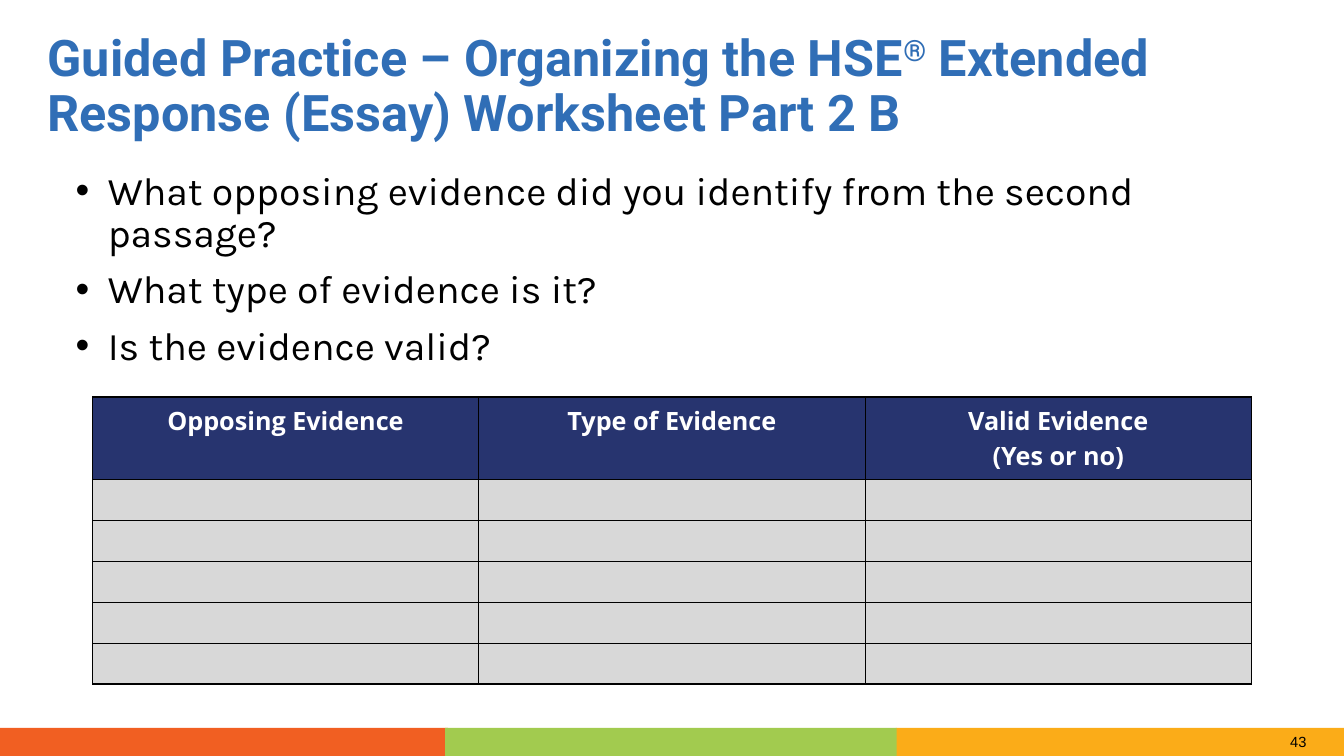
from lxml.etree import SubElement
from pptx import Presentation
from pptx.dml.color import RGBColor
from pptx.enum.shapes import MSO_SHAPE as Preset
from pptx.enum.text import MSO_ANCHOR as Anchor, PP_ALIGN as Align
from pptx.oxml.ns import qn
from pptx.util import Pt

COLORS = {
    "title": "306EB6", "ink": "000000", "white": "FFFFFF",
    "header": "27346F", "cell": "D8D8D8",
    "orange": "F15F22", "green": "A2CB4F", "amber": "FBAC18",
}
QUESTIONS = [
    "What opposing evidence did you identify from the second passage?",
    "What type of evidence is it?",
    "Is the evidence valid?",
]
HEADINGS = ["Opposing Evidence", "Type of Evidence", "Valid Evidence\n(Yes or no)"]
ANSWER_ROWS = 5


def color(name):
    return RGBColor.from_string(COLORS[name])


class Worksheet:
    """Draws styled elements on one page."""

    def __init__(self, page):
        self.page = page

    def format(self, span, font, size, ink, bold=False):
        span.font.name = font
        span.font.size = Pt(size)
        span.font.bold = bold
        span.font.color.rgb = color(ink)

    def bar(self, left, width, fill):
        bar = self.page.shapes.add_shape(
            Preset.RECTANGLE, Pt(left), Pt(520), Pt(width), Pt(20))
        bar.shadow.inherit = False
        bar.fill.solid()
        bar.fill.fore_color.rgb = color(fill)
        bar.line.fill.background()

    def text_box(self, left, top, width, height, anchor=Anchor.TOP):
        box = self.page.shapes.add_textbox(Pt(left), Pt(top), Pt(width), Pt(height))
        frame = box.text_frame
        frame.word_wrap = True
        frame.vertical_anchor = anchor
        frame.margin_left = frame.margin_right = 0
        frame.margin_top = frame.margin_bottom = 0
        return frame

    def title(self, before, mark, after):
        para = self.text_box(34, 30, 893, 65, Anchor.MIDDLE).paragraphs[0]
        para.line_spacing = 0.9
        for text in (before, mark, after):
            span = para.add_run()
            span.text = text
            self.format(span, "Roboto", 36, "title", bold=True)
            if text == mark:
                span.font._element.set("baseline", "30000")

    def bullets(self, lines):
        frame = self.text_box(54, 122.4, 872.6, 293.8)
        frame.text = "\n".join(lines)
        for index, para in enumerate(frame.paragraphs):
            para.line_spacing = 0.9
            para.space_before = Pt(10 if index else 0)
            props = para._p.get_or_add_pPr()
            props.set("marL", str(Pt(23)))
            props.set("indent", str(-Pt(23)))
            SubElement(props, qn("a:buFont"), typeface="Arial")
            SubElement(props, qn("a:buChar"), char="•")
            self.format(para.runs[0], "Karla", 28, "ink")

    def borders(self, cell, widths):
        """Draw black borders; widths maps a side (L, R, T, B) to points."""
        props = cell._tc.get_or_add_tcPr()
        for index, (side, width) in enumerate(widths.items()):
            line = props.makeelement(qn(f"a:ln{side}"), {"w": str(Pt(width))})
            fill = SubElement(line, qn("a:solidFill"))
            SubElement(fill, qn("a:srgbClr"), val=COLORS["ink"])
            props.insert(index, line)

    def table(self, headings, answer_rows):
        table = self.page.shapes.add_table(
            answer_rows + 1, len(headings), Pt(66), Pt(283.6), Pt(828), Pt(205)).table
        table.first_row = table.horz_banding = False
        for index, row in enumerate(table.rows):
            is_header = index == 0
            row.height = Pt(58.6 if is_header else 29.3)
            for cell, heading in zip(row.cells, headings):
                cell.fill.solid()
                cell.fill.fore_color.rgb = color("header" if is_header else "cell")
                cell.margin_left = cell.margin_right = Pt(5)
                cell.margin_top = cell.margin_bottom = Pt(5 if is_header else 2)
                self.borders(cell, {
                    "L": 0.5, "R": 0.5,
                    "T": 1 if is_header else 0.5,
                    "B": 1 if index == answer_rows else 0.5,
                })
                if is_header:
                    cell.text_frame.text = heading
                    for para in cell.text_frame.paragraphs:
                        para.alignment = Align.CENTER
                        self.format(para.runs[0], "Open Sans", 18, "white", bold=True)

    def page_number(self, number):
        frame = self.text_box(913.7, 520, 27.4, 20, Anchor.MIDDLE)
        frame.text = number
        para = frame.paragraphs[0]
        para.alignment = Align.CENTER
        self.format(para.runs[0], "Arial", 10.5, "ink")


def main():
    deck = Presentation()
    deck.slide_width, deck.slide_height = Pt(960), Pt(540)
    sheet = Worksheet(deck.slides.add_slide(deck.slide_layouts[6]))
    sheet.bar(640, 320, "amber")
    sheet.bar(0, 320, "orange")
    sheet.bar(318, 322.5, "green")
    sheet.page_number("43")
    sheet.title("Guided Practice – Organizing the HSE", "®",
                " Extended Response (Essay) Worksheet Part 2 B")
    sheet.bullets(QUESTIONS)
    sheet.table(HEADINGS, ANSWER_ROWS)
    deck.save("out.pptx")


if __name__ == "__main__":
    main()
